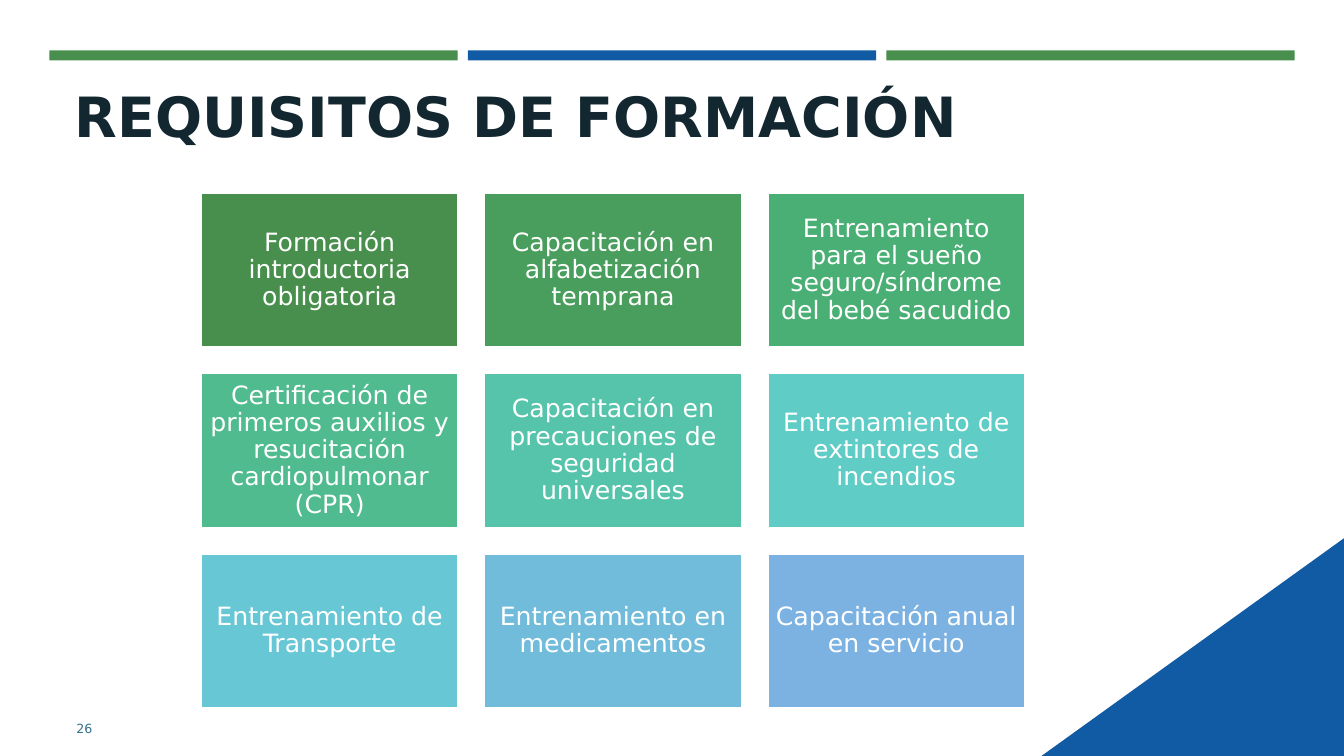
from dataclasses import dataclass

from pptx import Presentation
from pptx.dml.color import RGBColor
from pptx.enum.shapes import MSO_SHAPE
from pptx.enum.text import MSO_ANCHOR, MSO_AUTO_SIZE, PP_ALIGN
from pptx.util import Inches, Pt

RECTANGLE = MSO_SHAPE.RECTANGLE
TOP, MIDDLE = MSO_ANCHOR.TOP, MSO_ANCHOR.MIDDLE
LEFT, CENTER = PP_ALIGN.LEFT, PP_ALIGN.CENTER
NO_FIT = MSO_AUTO_SIZE.NONE

# Content
TITLE = "REQUISITOS DE FORMACIÓN"
PAGE_NUMBER = "26"
TRAININGS = [
    ("Formación introductoria obligatoria", "488F4D"),
    ("Capacitación en alfabetización temprana", "499E5E"),
    ("Entrenamiento para el sueño seguro/síndrome del bebé sacudido", "4AAF74"),
    ("Certificación de primeros auxilios y resucitación cardiopulmonar (CPR)", "4FBB8F"),
    ("Capacitación en precauciones de seguridad universales", "56C4AA"),
    ("Entrenamiento de extintores de incendios", "5FCCC6"),
    ("Entrenamiento de Transporte", "68C7D4"),
    ("Entrenamiento en medicamentos", "72BCDB"),
    ("Capacitación anual en servicio", "7CB2E1"),
]


@dataclass(frozen=True)
class Theme:
    font: str = "DejaVu Sans"
    green: str = "488F4D"
    blue: str = "115BA4"
    ink: str = "132731"
    number: str = "36718D"
    white: str = "FFFFFF"
    title_size: float = 39.6
    card_size: float = 18
    number_size: float = 9


THEME = Theme()

# Layout, in inches
PAGE_WIDTH, PAGE_HEIGHT = 13.33, 7.5
BAR_LEFT, BAR_TOP, BAR_WIDTH, BAR_HEIGHT, BAR_STEP = 0.49, 0.5, 4.05, 0.1, 4.15
COLUMNS = 3
GRID_LEFT, GRID_TOP = 1.99, 1.91
CARD_WIDTH, CARD_HEIGHT = 2.56, 1.54
CARD_GAP = 0.25
CARD_INSET = 0.07
CORNER_LEFT, CORNER_TOP = 10.33, 5.34


def paint(shape, color):
    shape.shadow.inherit = False
    shape.fill.solid()
    shape.fill.fore_color.rgb = RGBColor.from_string(color)
    shape.line.fill.background()


def add_rectangle(page, left, top, width, height, color):
    box = page.shapes.add_shape(
        RECTANGLE, Inches(left), Inches(top), Inches(width), Inches(height))
    paint(box, color)
    return box


def write(box, text, size, color, align=LEFT, anchor=MIDDLE, bold=False):
    frame = box.text_frame
    frame.word_wrap = True
    frame.auto_size = NO_FIT
    frame.vertical_anchor = anchor
    para = frame.paragraphs[0]
    para.alignment = align
    span = para.add_run()
    span.text = text
    span.font.name = THEME.font
    span.font.size = Pt(size)
    span.font.bold = bold
    span.font.color.rgb = RGBColor.from_string(color)
    return frame


def add_decoration(page):
    # Bars across the top
    for index, color in enumerate((THEME.green, THEME.blue, THEME.green)):
        add_rectangle(page, BAR_LEFT + index * BAR_STEP, BAR_TOP,
                      BAR_WIDTH, BAR_HEIGHT, color)
    # Triangle in the bottom right corner
    outline = page.shapes.build_freeform(Inches(CORNER_LEFT), Inches(PAGE_HEIGHT))
    outline.add_line_segments([
        (Inches(PAGE_WIDTH), Inches(CORNER_TOP)),
        (Inches(PAGE_WIDTH), Inches(PAGE_HEIGHT)),
    ], close=True)
    paint(outline.convert_to_shape(), THEME.blue)


def add_title(page):
    title = page.shapes.title
    title.left, title.top = Inches(0.64), Inches(0.71)
    title.width, title.height = Inches(12.06), Inches(0.91)
    frame = write(title, TITLE, THEME.title_size, THEME.ink, anchor=TOP, bold=True)
    frame.margin_top = Inches(0.1)
    frame.paragraphs[0].line_spacing = 1.0


def add_cards(page):
    for index, (text, color) in enumerate(TRAININGS):
        row, column = divmod(index, COLUMNS)
        card = add_rectangle(
            page,
            GRID_LEFT + column * (CARD_WIDTH + CARD_GAP),
            GRID_TOP + row * (CARD_HEIGHT + CARD_GAP),
            CARD_WIDTH, CARD_HEIGHT, color)
        card.line.color.rgb = RGBColor.from_string(THEME.white)
        card.line.width = Pt(2)
        frame = write(card, text, THEME.card_size, THEME.white, align=CENTER)
        frame.margin_left = frame.margin_right = Inches(CARD_INSET)
        frame.margin_top = frame.margin_bottom = Inches(CARD_INSET)
        frame.paragraphs[0].line_spacing = 0.9


def add_page_number(page):
    box = page.shapes.add_textbox(Inches(0.66), Inches(7.03), Inches(1.15), Inches(0.4))
    write(box, PAGE_NUMBER, THEME.number_size, THEME.number)


def main():
    deck = Presentation()
    deck.slide_width, deck.slide_height = Inches(PAGE_WIDTH), Inches(PAGE_HEIGHT)
    title_only = deck.slide_layouts[5]
    page = deck.slides.add_slide(title_only)
    add_decoration(page)
    add_title(page)
    add_cards(page)
    add_page_number(page)
    deck.save("out.pptx")


if __name__ == "__main__":
    main()
